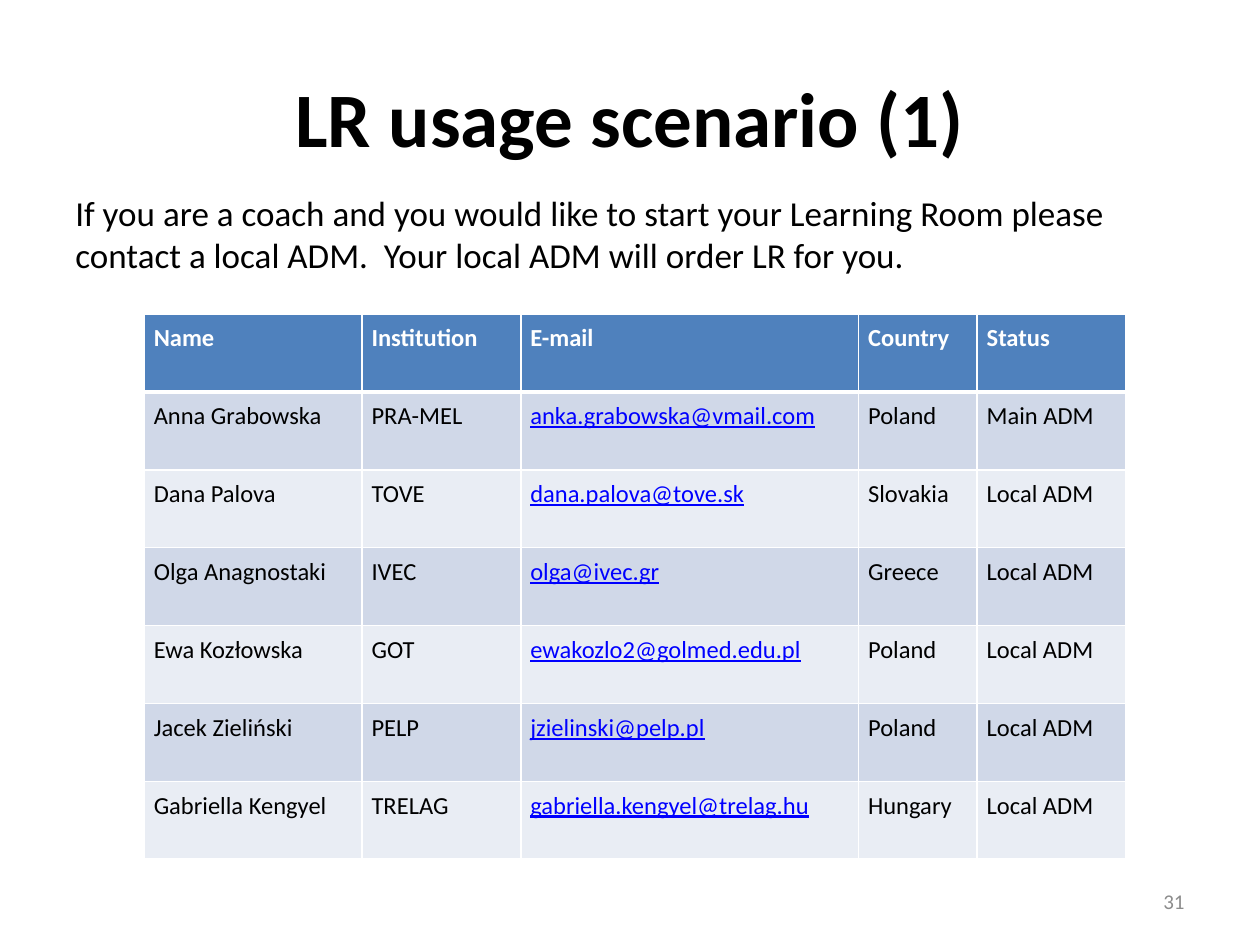
from lxml import etree
from pptx import Presentation
from pptx import util as u
from pptx.dml.color import RGBColor
from pptx.enum import text
from pptx.oxml import ns

BLACK = RGBColor(0x00, 0x00, 0x00)
WHITE = RGBColor(0xFF, 0xFF, 0xFF)
GREY = RGBColor(0x8C, 0x8C, 0x8C)
BLUE = RGBColor(0x4F, 0x81, 0xBD)
LINK = RGBColor(0x00, 0x00, 0xFF)
BANDS = (RGBColor(0xE9, 0xED, 0xF4), RGBColor(0xD0, 0xD8, 0xE8))

HEADINGS = ("Name", "Institution", "E-mail", "Country", "Status")
ADMINS = (
    ("Anna Grabowska", "PRA-MEL", "anka.grabowska@vmail.com", "Poland", "Main ADM"),
    ("Dana Palova", "TOVE", "dana.palova@tove.sk", "Slovakia", "Local ADM"),
    ("Olga Anagnostaki", "IVEC", "olga@ivec.gr", "Greece", "Local ADM"),
    ("Ewa Kozłowska", "GOT", "ewakozlo2@golmed.edu.pl", "Poland", "Local ADM"),
    ("Jacek Zieliński", "PELP", "jzielinski@pelp.pl", "Poland", "Local ADM"),
    ("Gabriella Kengyel", "TRELAG", "gabriella.kengyel@trelag.hu", "Hungary", "Local ADM"),
)
COLUMN_WIDTHS = (4.39, 3.2, 6.81, 2.39, 3.0)
ROW_HEIGHT = 1.57
EMAIL_COLUMN = HEADINGS.index("E-mail")


class SlideWriter:
    """Holds the font and the current slide, and adds styled elements to it."""

    def __init__(self, slide, font_name="Calibri"):
        self.slide = slide
        self.font_name = font_name

    def style(self, paragraph, size, color, bold=False, underline=False):
        font = paragraph.font
        font.name = self.font_name
        font.size = u.Pt(size)
        font.color.rgb = color
        font.bold = bold
        font.underline = underline

    def text(self, words, box, size, color=BLACK, bold=False, before=0,
             align=text.PP_ALIGN.LEFT, anchor=text.MSO_ANCHOR.MIDDLE):
        frame = self.slide.shapes.add_textbox(*map(u.Cm, box)).text_frame
        frame.word_wrap = True
        frame.vertical_anchor = anchor
        paragraph = frame.paragraphs[0]
        paragraph.text = words
        paragraph.alignment = align
        paragraph.space_before = u.Pt(before)
        self.style(paragraph, size, color, bold)

    def borders(self, cell, widths):
        properties = cell._tc.get_or_add_tcPr()
        for index, (side, width) in enumerate(zip("LRTB", widths)):
            line = etree.Element(ns.qn(f"a:ln{side}"), w=str(u.Pt(width)))
            fill = etree.SubElement(line, ns.qn("a:solidFill"))
            etree.SubElement(fill, ns.qn("a:srgbClr"), val=str(WHITE))
            properties.insert(index, line)

    def cell(self, cell, words, fill, color, bold=False, underline=False):
        cell.fill.solid()
        cell.fill.fore_color.rgb = fill
        cell.margin_left = cell.margin_right = u.Cm(0.19)
        cell.margin_top = cell.margin_bottom = u.Cm(0.1)
        paragraph = cell.text_frame.paragraphs[0]
        paragraph.text = words
        paragraph.line_spacing = 1.15
        paragraph.space_after = u.Pt(10)
        self.style(paragraph, 14, color, bold, underline)

    def table(self, headings, rows, left, top):
        table = self.slide.shapes.add_table(
            len(rows) + 1, len(headings), u.Cm(left), u.Cm(top),
            u.Cm(sum(COLUMN_WIDTHS)), u.Cm(ROW_HEIGHT * (len(rows) + 1))).table
        for column, width in zip(table.columns, COLUMN_WIDTHS):
            column.width = u.Cm(width)
        for r, row in enumerate((headings, *rows)):
            table.rows[r].height = u.Cm(ROW_HEIGHT)
            for c, words in enumerate(row):
                cell = table.cell(r, c)
                if r == 0:
                    self.cell(cell, words, BLUE, WHITE, bold=True)
                else:
                    is_email = c == EMAIL_COLUMN
                    self.cell(cell, words, BANDS[r % 2], LINK if is_email else BLACK,
                              underline=is_email)
                self.borders(cell, (1, 1, 3 if r == 1 else 1, 3 if r == 0 else 1))


def main():
    deck = Presentation()
    deck.slide_width, deck.slide_height = u.Cm(25.4), u.Cm(19.05)
    writer = SlideWriter(deck.slides.add_slide(deck.slide_layouts[6]))
    writer.text("LR usage scenario (1)", (1.27, 0.76, 22.86, 3.18), 44,
                bold=True, align=text.PP_ALIGN.CENTER)
    writer.text("31", (18.2, 17.66, 5.93, 1.01), 12, GREY, align=text.PP_ALIGN.RIGHT)
    writer.text("If you are a coach and you would like to start your Learning Room please "
                "contact a local ADM.  Your local ADM will order LR for you.",
                (1.27, 3.73, 22.86, 14.6), 20, before=4, anchor=text.MSO_ANCHOR.TOP)
    writer.table(HEADINGS, ADMINS, 2.91, 6.33)
    deck.save("out.pptx")


if __name__ == "__main__":
    main()
